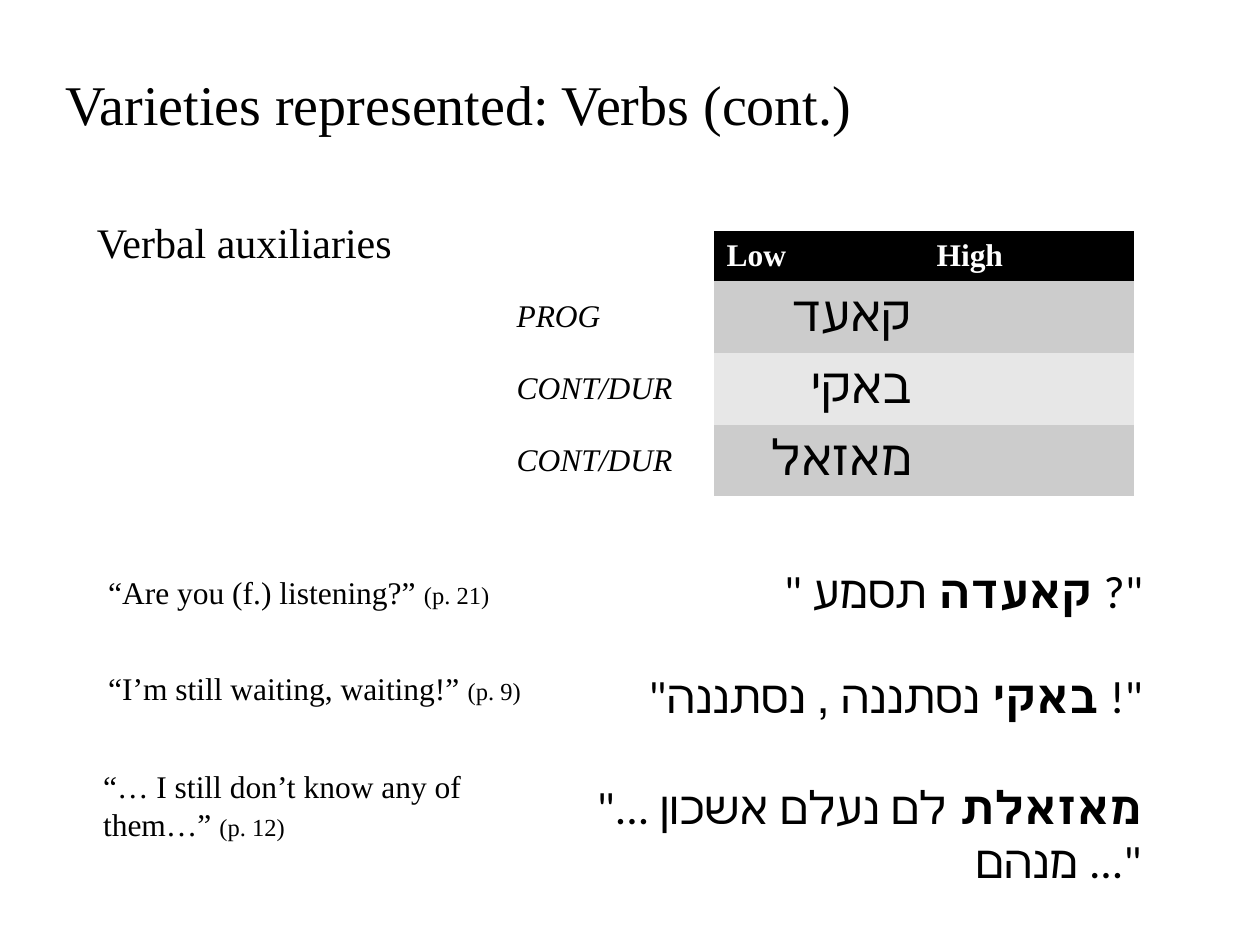
from pptx import Presentation
from pptx.dml.color import RGBColor
from pptx.enum.text import MSO_ANCHOR, MSO_AUTO_SIZE, PP_ALIGN
from pptx.util import Inches, Pt

LEFT, RIGHT = PP_ALIGN.LEFT, PP_ALIGN.RIGHT
TOP, MIDDLE = MSO_ANCHOR.TOP, MSO_ANCHOR.MIDDLE
GROW, FIXED = MSO_AUTO_SIZE.SHAPE_TO_FIT_TEXT, MSO_AUTO_SIZE.NONE

THEME = {
    "latin": "Times New Roman", "hebrew": "Calibri",
    "black": "000000", "white": "FFFFFF", "bands": ("CCCCCC", "E7E7E7"),
    "title": 32, "subtitle": 24, "body": 18, "page": 14,
    "hebrew_cell": 28, "hebrew_quote": 26,
}
NO_GRID_STYLE = "{2D5ABB26-0587-4C30-8999-92F81FD0307C}"

# Content
TITLE = "Varieties represented: Verbs (cont.)"
SUBTITLE = "Verbal auxiliaries"
HEADER = ("", "Low", "High")
AUXILIARIES = [("PROG", "קאעד"), ("CONT/DUR", "באקי"), ("CONT/DUR", "מאזאל")]
# Each example: Hebrew runs (opening, auxiliary, rest) and box, gloss, page and box
EXAMPLES = [
    (('" ', "קאעדה ", 'תסמע ?"'), (4.92, 4.42, 4.25, 0.54),
     "“Are you (f.) listening?” ", "(p. 21)", (0.76, 4.5, 4.25, 0.4)),
    (('"', "באקי ", 'נסתננה , נסתננה !"'), (4.67, 5.25, 4.5, 0.54),
     "“I’m still waiting, waiting!” ", "(p. 9)", (0.76, 5.26, 3.79, 0.4)),
    (('"... ', "מאזאלת ", 'לם נעלם אשכון מנהם ..."'), (4.08, 6.13, 5.08, 0.54),
     "“… I still don’t know any of them…” ", "(p. 12)", (0.72, 6.04, 3.2, 0.71)),
]


def style(run, size, font="latin", color="black", bold=False, italic=False):
    run.font.name = THEME[font]
    run.font.size = Pt(THEME[size])
    run.font.color.rgb = RGBColor.from_string(THEME[color])
    run.font.bold = bold
    run.font.italic = italic


def add_text(shapes, box, runs, align=LEFT, fit=GROW):
    """Add a text box from (text, style options) pairs and return its paragraph."""
    frame = shapes.add_textbox(*map(Inches, box)).text_frame
    frame.word_wrap = True
    frame.auto_size = fit
    paragraph = frame.paragraphs[0]
    paragraph.alignment = align
    for text, options in runs:
        run = paragraph.add_run()
        run.text = text
        style(run, **options)
    return paragraph


def fill_cell(cell, text, fill, align=LEFT, **options):
    cell.vertical_anchor = MIDDLE
    if fill:
        cell.fill.solid()
        cell.fill.fore_color.rgb = RGBColor.from_string(fill)
    else:
        cell.fill.background()
    if text:
        cell.text_frame.text = text
        paragraph = cell.text_frame.paragraphs[0]
        paragraph.alignment = align
        style(paragraph.runs[0], **options)


prs = Presentation()
prs.slide_width, prs.slide_height = Inches(10), Inches(7.5)
slide = prs.slides.add_slide(prs.slide_layouts[5])

# Title and subtitle
title = slide.shapes.title
title.left, title.top, title.width, title.height = map(Inches, (0.42, 0.5, 8.27, 0.64))
title.text_frame.text = TITLE
title.text_frame.vertical_anchor = TOP
title.text_frame.auto_size = GROW
title.text_frame.paragraphs[0].alignment = LEFT
style(title.text_frame.paragraphs[0].runs[0], "title")

subtitle = add_text(slide.shapes, (0.67, 1.67, 3.83, 0.67),
                    [(SUBTITLE, {"size": "subtitle"})], fit=FIXED)
subtitle.space_before = Pt(0.2 * THEME["subtitle"])

# Table of auxiliaries
table_frame = slide.shapes.add_table(len(AUXILIARIES) + 1, len(HEADER), *map(Inches, (4, 1.83, 5, 2.1)))
table = table_frame.table
table.first_row = table.horz_banding = False
table._tbl.tblPr[0].text = NO_GRID_STYLE
for row_number, row in enumerate(table.rows):
    row.height = Inches(0.57 if row_number else 0.4)
for column, heading in enumerate(HEADER):
    fill_cell(table.cell(0, column), heading, THEME["black"] if heading else None,
              size="body", color="white", bold=True)
for row_number, (label, auxiliary) in enumerate(AUXILIARIES, 1):
    band = THEME["bands"][(row_number - 1) % 2]
    fill_cell(table.cell(row_number, 0), label, None, size="body", italic=True)
    fill_cell(table.cell(row_number, 1), auxiliary, band, RIGHT, size="hebrew_cell", font="hebrew")
    fill_cell(table.cell(row_number, 2), "", band)

# Examples, each a Hebrew quotation grouped with its gloss
for hebrew, hebrew_box, gloss, page, gloss_box in EXAMPLES:
    example = slide.shapes.add_group_shape().shapes
    quotation = [(text, {"size": "hebrew_quote", "font": "hebrew", "bold": part == 1})
                 for part, text in enumerate(hebrew)]
    add_text(example, hebrew_box, quotation, RIGHT)
    add_text(example, gloss_box, [(gloss, {"size": "body"}), (page, {"size": "page"})])

prs.save("out.pptx")
